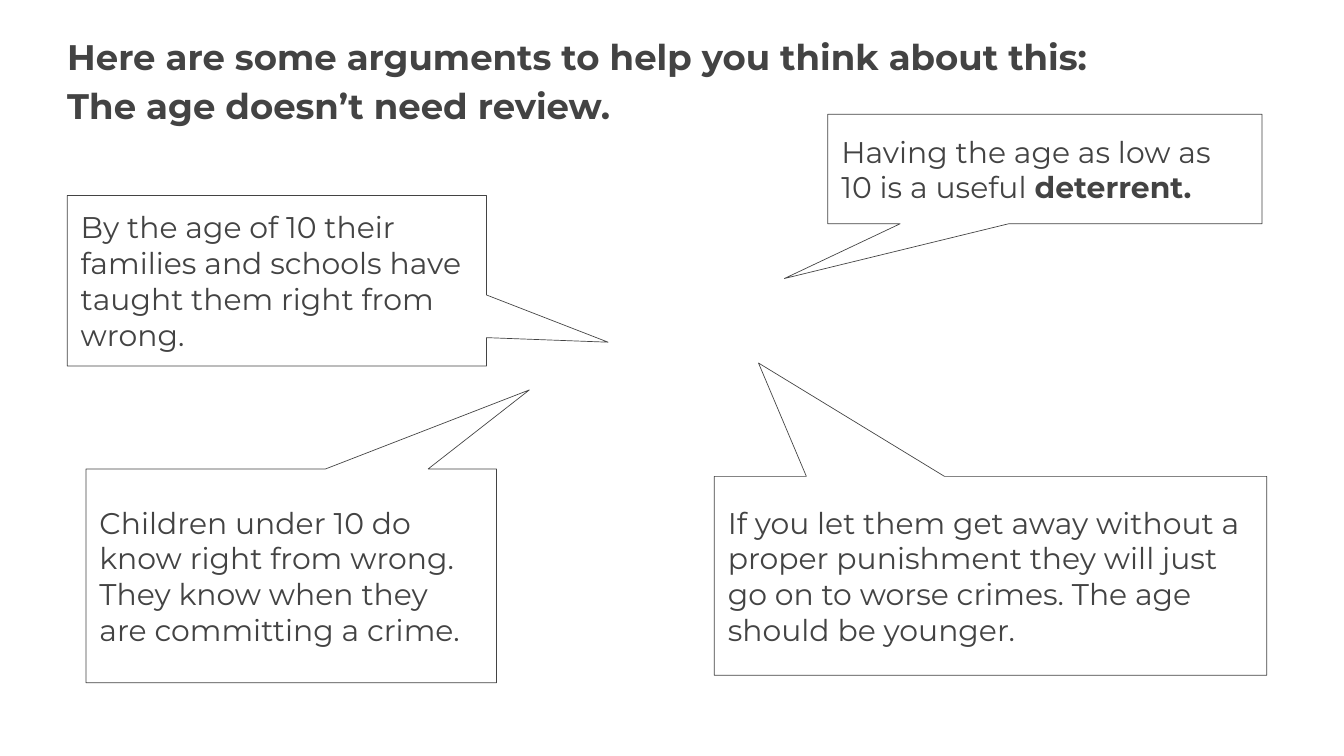
"""Build a slide of four speech callouts arguing that the age needs no review."""
import pptx
import pptx.dml.color
import pptx.enum.shapes
import pptx.enum.text
import pptx.util

Cm = pptx.util.Cm
COLORS = {"ink": "434343", "paper": "FFFFFF"}
FONT = "Montserrat"


def add_run(p, text, size=32, bold=False, color="ink"):
    r = p.add_run()
    r.text = text
    r.font.name = FONT
    r.font.size = pptx.util.Pt(size)
    r.font.bold = bold
    r.font.color.rgb = pptx.dml.color.RGBColor.from_string(COLORS[color])
    return r


class Deck:
    def __init__(self, width, height):
        self.prs = pptx.Presentation()
        self.prs.slide_width, self.prs.slide_height = Cm(width), Cm(height)
        self.s = self.prs.slides.add_slide(self.prs.slide_layouts[5])
        self.s.background.fill.solid()
        self.s.background.fill.fore_color.rgb = pptx.dml.color.RGBColor.from_string(COLORS["paper"])

    def frame(self, sp, inset, anchor):
        tf = sp.text_frame
        tf.word_wrap = True
        tf.auto_size = pptx.enum.text.MSO_AUTO_SIZE.NONE
        tf.vertical_anchor = anchor
        tf.margin_left = tf.margin_top = tf.margin_right = tf.margin_bottom = Cm(inset)
        return tf

    def title(self, box, lines):
        sp = self.s.shapes.title
        sp.left, sp.top, sp.width, sp.height = map(Cm, box)
        tf = self.frame(sp, 0, pptx.enum.text.MSO_ANCHOR.TOP)
        for i, line in enumerate(lines):
            p = tf.add_paragraph() if i else tf.paragraphs[0]
            p.alignment = pptx.enum.text.PP_ALIGN.LEFT
            p.line_spacing = 1.15
            p.space_before = pptx.util.Pt(0)
            add_run(p, line, size=38, bold=True)

    def callout(self, box, tip, text, strong=""):
        sp = self.s.shapes.add_shape(
            pptx.enum.shapes.MSO_SHAPE.RECTANGULAR_CALLOUT, *map(Cm, box))
        sp.adjustments[0], sp.adjustments[1] = tip
        sp.shadow.inherit = False
        sp.fill.background()
        sp.line.color.rgb = pptx.dml.color.RGBColor.from_string(COLORS["ink"])
        sp.line.width = pptx.util.Pt(0.75)
        p = self.frame(sp, 0.51, pptx.enum.text.MSO_ANCHOR.MIDDLE).paragraphs[0]
        p.alignment = pptx.enum.text.PP_ALIGN.LEFT
        add_run(p, text)
        if strong:
            add_run(p, strong, bold=True)


def main():
    deck = Deck(50.8, 28.58)
    deck.title((2.54, 1.09, 45.69, 4.52), [
        "Here are some arguments to help you think about this:",
        "The age doesn’t need review.",
    ])
    deck.callout((3.25, 17.73, 15.52, 8.08), (0.58, -0.87),
                 "Children under 10 do know right from wrong. "
                 "They know when they are committing a crime.")
    deck.callout((27, 18.01, 20.88, 7.52), (-0.42, -1.07),
                 "If you let them get away without a proper punishment they will "
                 "just go on to worse crimes. The age should be younger.")
    deck.callout((31.29, 4.32, 16.41, 4.14), (-0.6, 1),
                 "Having the age as low as 10 is a useful ", strong="deterrent.")
    deck.callout((2.54, 7.39, 15.85, 6.45), (0.79, 0.36),
                 "By the age of 10 their families and schools have "
                 "taught them right from wrong.")
    deck.prs.save("out.pptx")


if __name__ == "__main__":
    main()
